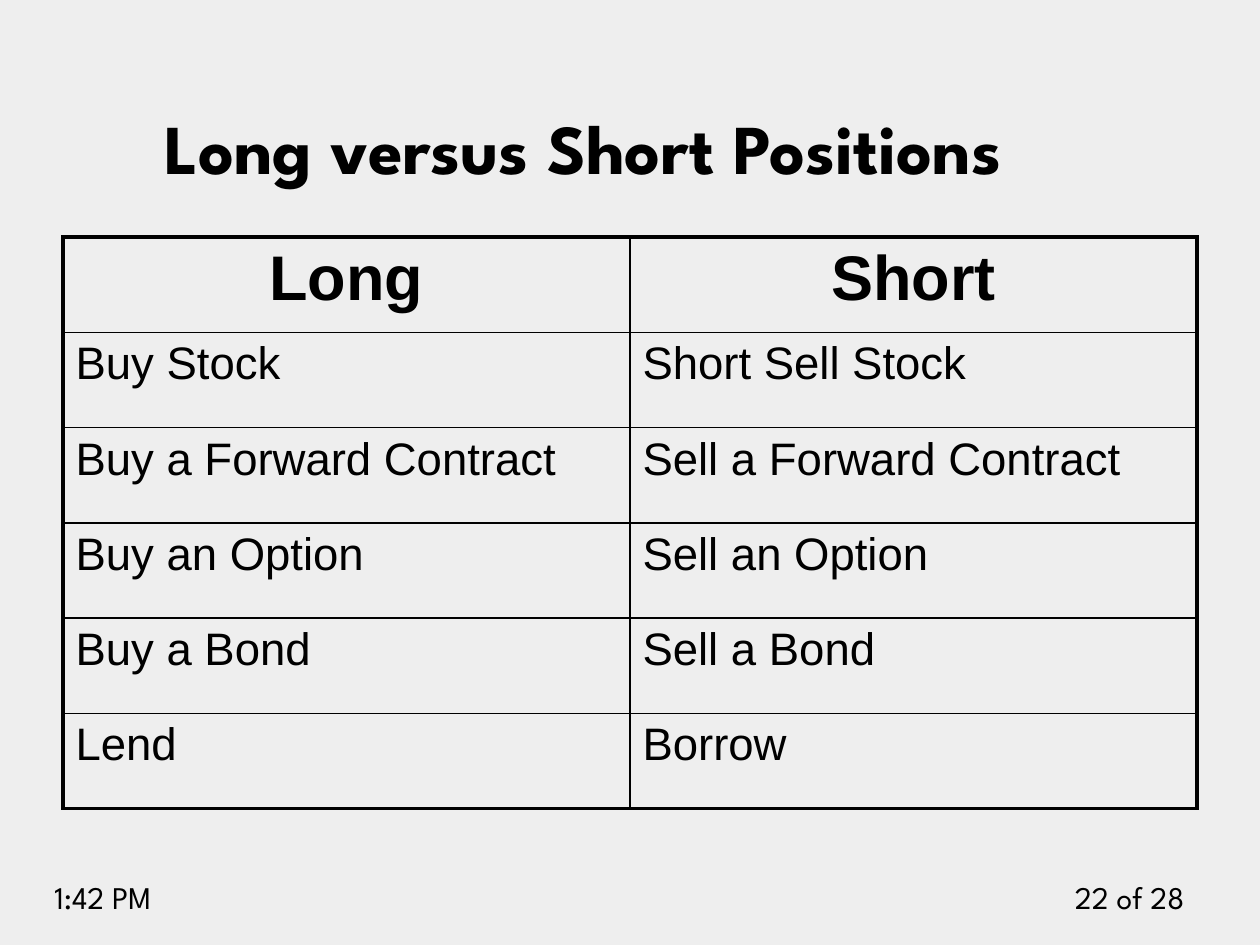
from lxml.etree import SubElement
from pptx import Presentation
from pptx.dml.color import RGBColor
from pptx.enum.text import MSO_ANCHOR as Anchor, PP_ALIGN as Align
from pptx.oxml.ns import qn
from pptx.util import Pt

# Content
TITLE = "Long versus Short Positions"
ROWS = [
    ("Long", "Short"),
    ("Buy Stock", "Short Sell Stock"),
    ("Buy a Forward Contract", "Sell a Forward Contract"),
    ("Buy an Option", "Sell an Option"),
    ("Buy a Bond", "Sell a Bond"),
    ("Lend", "Borrow"),
]
FOOTERS = [
    ("1:42 PM", (42, 872, 199, 50), Align.LEFT),
    ("22 of 28", (1050, 872, 147, 50), Align.RIGHT),
]

# Look
PX = 914400 // 126
COLORS = {"background": "EEEEEE", "ink": "000000"}
HEAD_FONT, BODY_FONT = "League Spartan", "Arial"
TITLE_BOX = (63, 16, 1040, 179)
TABLE_BOX = (63, 237, 1134, 572)
OUTER, INNER = Pt(2.25), Pt(1)


def emu(box):
    return [v * PX for v in box]


def style(p, name, size, bold=False, align=Align.LEFT):
    p.alignment = align
    p.font.name, p.font.size, p.font.bold = name, Pt(size), bold
    p.font.color.rgb = RGBColor.from_string(COLORS["ink"])


def set_borders(cell, widths):
    tc_pr = cell._tc.get_or_add_tcPr()
    for side, width in widths.items():
        ln = SubElement(tc_pr, qn(f"a:ln{side}"), w=str(width))
        fill = SubElement(ln, qn("a:solidFill"))
        SubElement(fill, qn("a:srgbClr"), val=COLORS["ink"])


prs = Presentation()
prs.slide_width, prs.slide_height = emu((1260, 945))
s = prs.slides.add_slide(prs.slide_layouts[5])
s.background.fill.solid()
s.background.fill.fore_color.rgb = RGBColor.from_string(COLORS["background"])

# Title
title = s.shapes.title
title.left, title.top, title.width, title.height = emu(TITLE_BOX)
tf = title.text_frame
tf.text = TITLE
tf.vertical_anchor = Anchor.BOTTOM
style(tf.paragraphs[0], HEAD_FONT, 40, True, Align.CENTER)

# Table of positions
n_rows, n_cols = len(ROWS), len(ROWS[0])
table = s.shapes.add_table(n_rows, n_cols, *emu(TABLE_BOX)).table
table.horz_banding = table.first_row = False
for i, row in enumerate(ROWS):
    for j, text in enumerate(row):
        cell = table.cell(i, j)
        cell.text = text
        p = cell.text_frame.paragraphs[0]
        if i == 0:
            style(p, BODY_FONT, 36, True, Align.CENTER)
        else:
            style(p, BODY_FONT, 26)
        set_borders(cell, {
            "L": OUTER if j == 0 else INNER,
            "R": OUTER if j == n_cols - 1 else INNER,
            "T": OUTER if i == 0 else INNER,
            "B": OUTER if i == n_rows - 1 else INNER,
        })
        cell.fill.background()

# Time and page number
for text, box, align in FOOTERS:
    tf = s.shapes.add_textbox(*emu(box)).text_frame
    tf.word_wrap = True
    tf.text = text
    style(tf.paragraphs[0], HEAD_FONT, 18, align=align)

prs.save("out.pptx")
